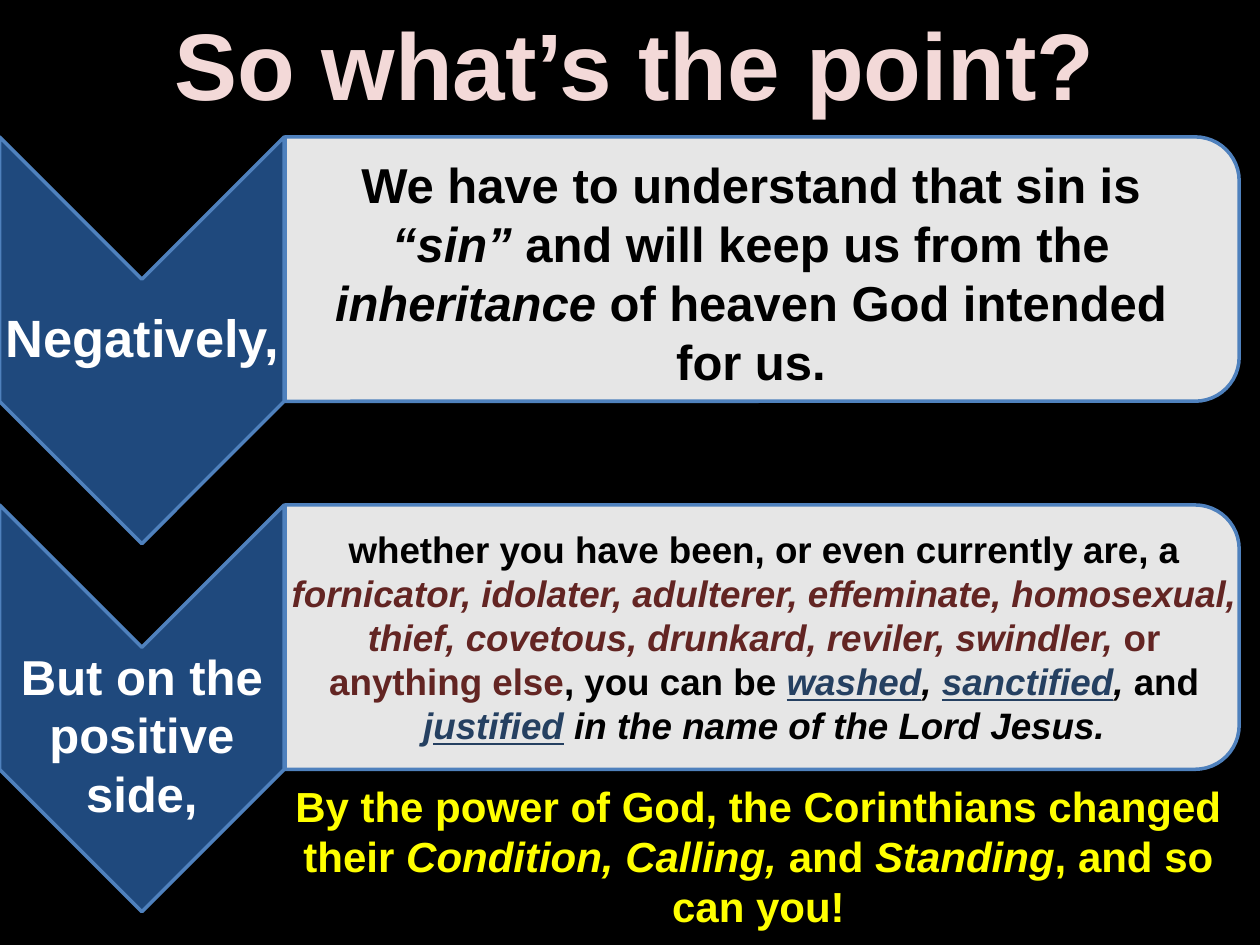
from dataclasses import dataclass
from typing import Any

from lxml.etree import SubElement
from pptx import Presentation
from pptx.dml.color import RGBColor
from pptx.enum.shapes import MSO_SHAPE as Preset
from pptx.enum.text import MSO_ANCHOR as Anchor, PP_ALIGN as Align
from pptx.oxml.ns import qn
from pptx.util import Cm, Pt

BLACK = RGBColor(0x00, 0x00, 0x00)
WHITE = RGBColor(0xFF, 0xFF, 0xFF)
PINK = RGBColor(0xF3, 0xD9, 0xD8)
YELLOW = RGBColor(0xFF, 0xFF, 0x00)
NAVY = RGBColor(0x1F, 0x49, 0x7D)
BLUE = RGBColor(0x4F, 0x81, 0xBD)
MAROON = RGBColor(0x63, 0x25, 0x23)
DEEP_BLUE = RGBColor(0x25, 0x40, 0x61)

ROW_PITCH = 7.42


@dataclass
class SlideBuilder:
    page: Any
    font: str = "Arial"
    line_color: RGBColor = BLUE
    line_width: float = 2

    def background(self, color):
        fill = self.page.background.fill
        fill.solid()
        fill.fore_color.rgb = color

    def shape(self, preset, place, color, opacity=100):
        shape = self.page.shapes.add_shape(preset, *map(Cm, place))
        shape.rotation = 90
        shape.shadow.inherit = False
        shape.fill.solid()
        shape.fill.fore_color.rgb = color
        if opacity < 100:
            tone = shape.fill._xPr.find(qn("a:solidFill"))[0]
            SubElement(tone, qn("a:alpha"), val=str(opacity * 1000))
        shape.line.color.rgb = self.line_color
        shape.line.width = Pt(self.line_width)

    def chevron(self, top):
        self.shape(Preset.CHEVRON, (-1.24, top, 8.2, 5.74), NAVY)

    def panel(self, top):
        self.shape(Preset.ROUND_2_SAME_RECTANGLE, (12.7, top, 5.33, 19.23), WHITE, 90)

    def text(self, place, size, color, spans):
        box = self.page.shapes.add_textbox(*map(Cm, place))
        frame = box.text_frame
        frame.word_wrap = True
        para = frame.paragraphs[0]
        para.alignment = Align.CENTER
        para.font.name = self.font
        para.font.size = Pt(size)
        para.font.bold = True
        para.font.color.rgb = color
        for words, style, tint in spans:
            span = para.add_run()
            span.text = words
            if "i" in style:
                span.font.italic = True
            if "u" in style:
                span.font.underline = True
            span.font.color.rgb = tint or color
        return frame

    def label(self, place, size, words):
        frame = self.text(place, size, WHITE, [(words, "", None)])
        frame.vertical_anchor = Anchor.MIDDLE
        frame.margin_left = frame.margin_right = Cm(0.05)
        frame.margin_top = frame.margin_bottom = Cm(0.05)
        frame.paragraphs[0].line_spacing = 0.9


def main():
    deck = Presentation()
    deck.slide_width = Cm(25.4)
    deck.slide_height = Cm(19.05)
    slide = SlideBuilder(deck.slides.add_slide(deck.slide_layouts[6]))
    slide.background(BLACK)

    slide.text((3.18, 0, 19.25, 2.57), 54, PINK, [("So what’s the point?", "", None)])
    for row in range(2):
        slide.chevron(3.99 + row * ROW_PITCH)
        slide.panel(-4.19 + row * ROW_PITCH)

    slide.label((0, 5.64, 5.74, 2.46), 30, "Negatively,")
    slide.text((0, 12.9, 5.72, 3.84), 28, WHITE, [("But on the positive side,", "", None)])
    slide.text((5.56, 10.49, 19.69, 4.75), 21, BLACK, [
        ("whether you have been, or even currently are, a ", "", None),
        ("fornicator, idolater, adulterer, effeminate, homosexual, thief, "
         "covetous, drunkard, reviler, swindler, ", "i", MAROON),
        ("or anything else", "", MAROON),
        (", you can be ", "", None),
        ("washed", "iu", DEEP_BLUE),
        (", ", "i", None),
        ("sanctified", "iu", DEEP_BLUE),
        (", ", "i", None),
        ("and ", "", None),
        ("j", "i", DEEP_BLUE),
        ("ustified", "iu", DEEP_BLUE),
        (" ", "", None),
        ("in the name of the Lord Jesus.", "i", None),
    ])
    slide.text((5.23, 15.6, 20.12, 3.33), 24, YELLOW, [
        ("By the power of God, the Corinthians changed their ", "", None),
        ("Condition, Calling, ", "i", None),
        ("and ", "", None),
        ("Standing", "i", None),
        (", and so can you!", "", None),
    ])
    slide.text((6.15, 3, 17.98, 5.08), 28, BLACK, [
        ("We have to understand that sin is ", "", None),
        ("“sin”", "i", None),
        (" and will keep us from the ", "", None),
        ("inheritance ", "i", None),
        ("of heaven God intended for us.", "", None),
    ])
    deck.save("out.pptx")


if __name__ == "__main__":
    main()
